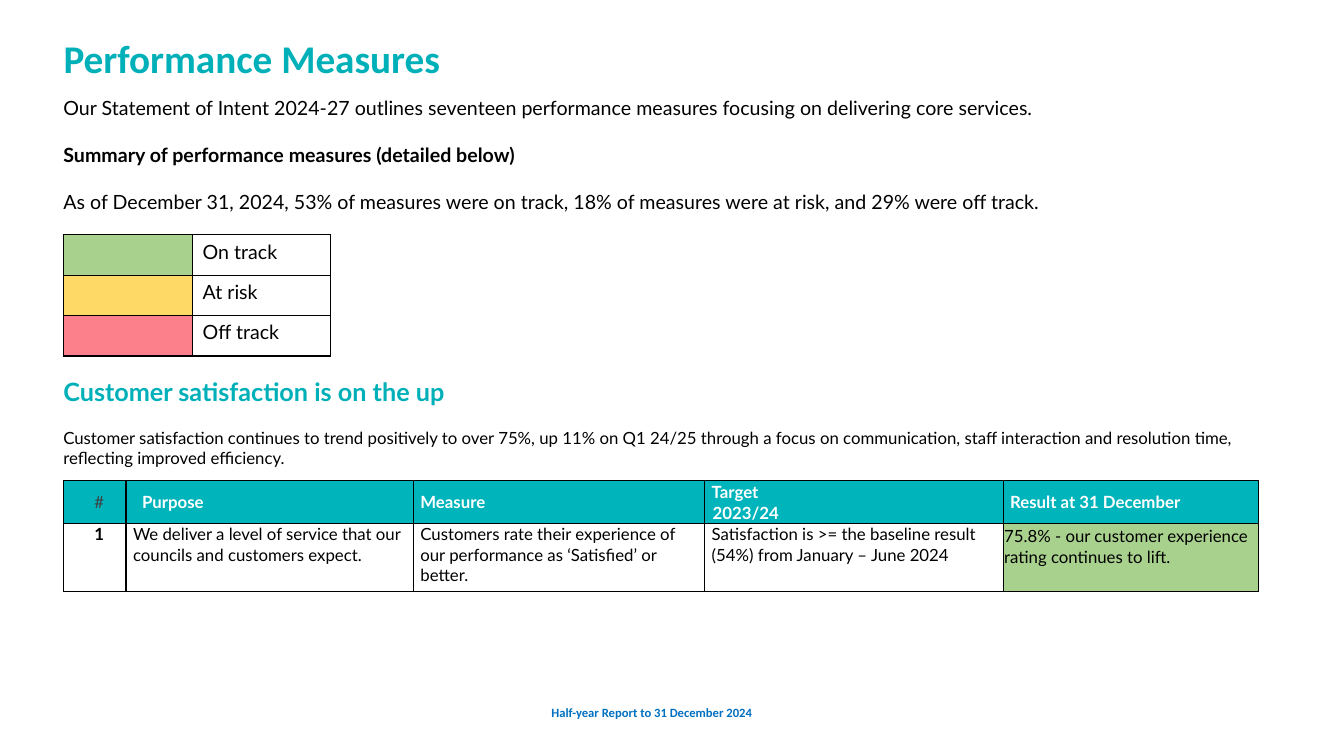
from dataclasses import dataclass

from lxml import etree
from pptx import Presentation
from pptx.dml.color import RGBColor
from pptx.enum.text import MSO_ANCHOR, MSO_AUTO_SIZE, PP_ALIGN
from pptx.oxml.ns import qn
from pptx.util import Pt

LEFT, CENTER, JUSTIFY = PP_ALIGN.LEFT, PP_ALIGN.CENTER, PP_ALIGN.JUSTIFY
TOP, MIDDLE = MSO_ANCHOR.TOP, MSO_ANCHOR.MIDDLE
NO_AUTOFIT = MSO_AUTO_SIZE.NONE
TITLE_ONLY = 5
EMU_PER_PX = 9144  # 100 px to the inch


@dataclass(frozen=True)
class Theme:
    heading: str = "00B0B9"
    header: str = "00B4BC"
    ink: str = "000000"
    grey: str = "404042"
    white: str = "FFFFFF"
    footer: str = "0070C0"
    on_track: str = "A9D18E"
    at_risk: str = "FFD966"
    off_track: str = "FC808C"
    title_font: str = "Calibri"
    body_font: str = "Lato"
    title_size: int = 28
    section_size: int = 18
    intro_size: int = 14
    detail_size: int = 12
    footer_size: int = 9


THEME = Theme()

INTRO = [
    ("Our Statement of Intent 2024-27 outlines seventeen performance measures "
     "focusing on delivering core services.", False),
    ("Summary of performance measures (detailed below)", True),
    ("As of December 31, 2024, 53% of measures were on track, 18% of measures "
     "were at risk, and 29% were off track.", False),
]
LEGEND = [(THEME.on_track, "On track"), (THEME.at_risk, "At risk"),
          (THEME.off_track, "Off track")]
SATISFACTION = (
    "Customer satisfaction continues to trend positively to over 75%, up 11% on "
    "Q1 24/25 through a focus on communication, staff interaction and resolution "
    "time, reflecting improved efficiency.")
MEASURE_HEADER = ["#", "Purpose", "Measure", "Target\n2023/24",
                  "Result at 31 December"]
MEASURE_ROW = [
    "1",
    "We deliver a level of service that our councils and customers expect.",
    "Customers rate their experience of our performance as ‘Satisfied’ or better.",
    "Satisfaction is >= the baseline result (54%) from January – June 2024",
    "75.8% - our customer experience rating continues to lift.",
]


def px(length):
    return length * EMU_PER_PX


def style(paragraph, size, color=THEME.ink, bold=False, font=THEME.body_font,
          align=LEFT, spacing=None):
    paragraph.alignment = align
    if spacing:
        paragraph.line_spacing = spacing
    paragraph.font.name = font
    paragraph.font.size = Pt(size)
    paragraph.font.bold = bold
    paragraph.font.color.rgb = RGBColor.from_string(color)


def add_text(slide, box, text):
    frame = slide.shapes.add_textbox(*map(px, box)).text_frame
    frame.word_wrap = True
    frame.text = text
    return frame


def add_grid(slide, left, top, columns, rows):
    """Add a plain table with thin black borders."""
    frame = slide.shapes.add_table(len(rows), len(columns), px(left), px(top),
                                   px(sum(columns)), px(sum(rows)))
    grid = frame.table
    grid.first_row = grid.horz_banding = False
    for column, width in zip(grid.columns, columns):
        column.width = px(width)
    for row, height in zip(grid.rows, rows):
        row.height = px(height)
    for cell in grid.iter_cells():
        properties = cell._tc.get_or_add_tcPr()
        for side in ("a:lnL", "a:lnR", "a:lnT", "a:lnB"):
            line = etree.SubElement(properties, qn(side), w=str(Pt(1)))
            fill = etree.SubElement(line, qn("a:solidFill"))
            etree.SubElement(fill, qn("a:srgbClr"), val=THEME.ink)
        cell.fill.background()
    return grid


def paint(cell, color):
    cell.fill.solid()
    cell.fill.fore_color.rgb = RGBColor.from_string(color)


def set_margins(cell, side, top=0):
    cell.margin_left = cell.margin_right = px(side)
    cell.margin_top, cell.margin_bottom = px(top), 0


def add_title(slide, box):
    title = slide.shapes.title
    title.left, title.top, title.width, title.height = map(px, box)
    frame = title.text_frame
    frame.text = "Performance Measures"
    frame.auto_size = NO_AUTOFIT
    frame.vertical_anchor = TOP
    style(frame.paragraphs[0], THEME.title_size, THEME.heading, True,
          THEME.title_font, spacing=Pt(32))


def add_intro(slide, box):
    frame = add_text(slide, box, "\n".join(text for text, _ in INTRO))
    for index, (paragraph, (_, bold)) in enumerate(zip(frame.paragraphs, INTRO)):
        style(paragraph, THEME.intro_size, bold=bold)
        if index:
            paragraph.space_before = Pt(17)


def add_legend(slide, left, top):
    grid = add_grid(slide, left, top, [128, 137], [40] * len(LEGEND))
    for row, (color, label) in enumerate(LEGEND):
        paint(grid.cell(row, 0), color)
        cell = grid.cell(row, 1)
        cell.text = label
        style(cell.text_frame.paragraphs[0], THEME.intro_size)


def add_section(slide, left, top):
    heading = add_text(slide, (left, top, 551, 40),
                       "Customer satisfaction is on the up")
    style(heading.paragraphs[0], THEME.section_size, THEME.heading, True)
    summary = add_text(slide, (left, top + 51, 1207, 50), SATISFACTION)
    style(summary.paragraphs[0], THEME.detail_size)


def fill_measure(cell, text, indent, **look):
    set_margins(cell, 7)
    paragraph = cell.text_frame.paragraphs[0]
    paragraph.text = text
    properties = paragraph._p.get_or_add_pPr()
    properties.set("marL", str(px(indent)))
    properties.set("indent", str(px(-1)))
    paragraph.space_after = Pt(5.2)
    style(paragraph, THEME.detail_size, spacing=1.03, **look)


def add_measures(slide, left, top):
    grid = add_grid(slide, left, top, [62, 285, 289, 296, 253], [42, 68])
    aligns = [CENTER, JUSTIFY, LEFT, LEFT, LEFT]
    for column, (text, align) in enumerate(zip(MEASURE_HEADER, aligns)):
        cell = grid.cell(0, column)
        number = column == 0
        fill_measure(cell, text, 10 if column < 2 else 1, align=align,
                     color=THEME.grey if number else THEME.white,
                     bold=not number)
        cell.vertical_anchor = MIDDLE
        paint(cell, THEME.header)
    for column, text in enumerate(MEASURE_ROW[:-1]):
        number = column == 0
        fill_measure(grid.cell(1, column), text, 10 if number else 0,
                     align=CENTER if number else LEFT, bold=number)
    # Result, coloured by status
    result = grid.cell(1, len(MEASURE_ROW) - 1)
    result.text = MEASURE_ROW[-1]
    set_margins(result, 1, 1)
    style(result.text_frame.paragraphs[0], THEME.detail_size, spacing=1.07)
    paint(result, THEME.on_track)


def add_footer(slide, box):
    frame = add_text(slide, box, "Half-year Report to 31 December 2024")
    style(frame.paragraphs[0], THEME.footer_size, THEME.footer, True,
          THEME.title_font, spacing=0.9)


def main():
    presentation = Presentation()
    presentation.slide_width, presentation.slide_height = px(1333), px(750)
    slide = presentation.slides.add_slide(presentation.slide_layouts[TITLE_ONLY])
    add_title(slide, (53, 31, 1195, 61))
    add_intro(slide, (53, 90, 1255, 148))
    add_legend(slide, 63, 233)
    add_section(slide, 53, 368)
    add_measures(slide, 63, 477)
    add_footer(slide, (537, 696, 257, 24))
    presentation.save("out.pptx")


if __name__ == "__main__":
    main()
